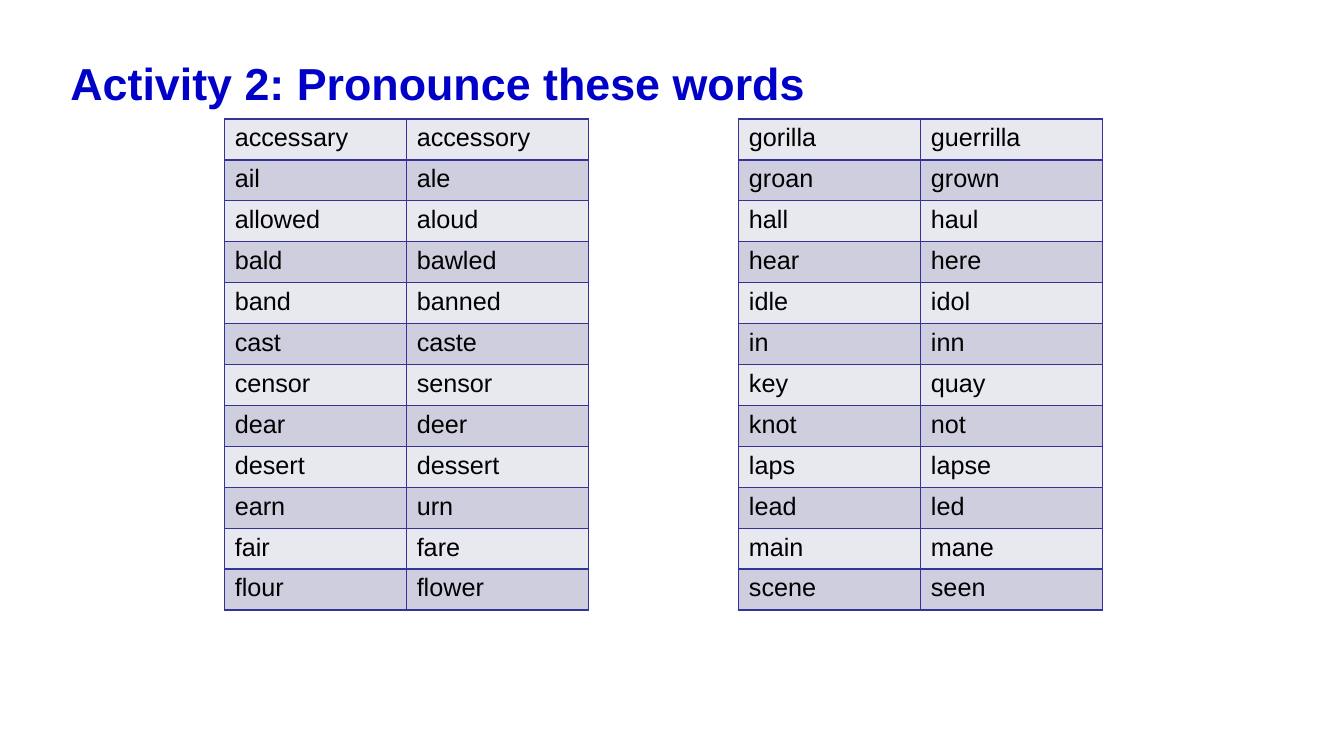
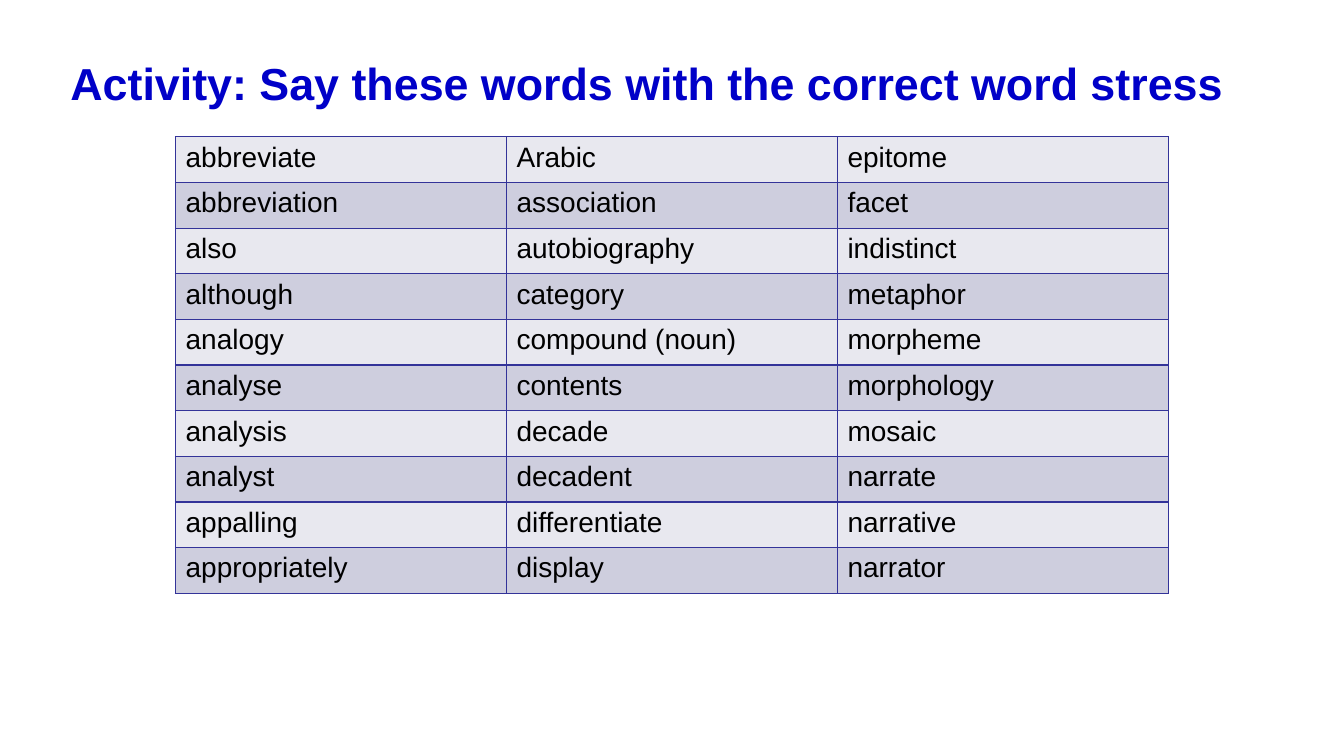
"""Build two pronunciation activity slides with banded word tables."""
from lxml.etree import SubElement
from pptx import Presentation
from pptx.dml.color import RGBColor
from pptx.enum.text import MSO_ANCHOR
from pptx.oxml.ns import qn
from pptx.util import Pt

FONT = "Arial"
TITLE_COLOR, TEXT_COLOR, BORDER = "0000C8", "000000", "333399"
BANDS = ("E8E8EF", "CECEDE")

PAIRS_A_TO_F = [
    ("accessary", "accessory"), ("ail", "ale"), ("allowed", "aloud"),
    ("bald", "bawled"), ("band", "banned"), ("cast", "caste"),
    ("censor", "sensor"), ("dear", "deer"), ("desert", "dessert"),
    ("earn", "urn"), ("fair", "fare"), ("flour", "flower"),
]
PAIRS_G_TO_S = [
    ("gorilla", "guerrilla"), ("groan", "grown"), ("hall", "haul"),
    ("hear", "here"), ("idle", "idol"), ("in", "inn"),
    ("key", "quay"), ("knot", "not"), ("laps", "lapse"),
    ("lead", "led"), ("main", "mane"), ("scene", "seen"),
]
STRESS_WORDS = [
    ("abbreviate", "Arabic", "epitome"),
    ("abbreviation", "association", "facet"),
    ("also", "autobiography", "indistinct"),
    ("although", "category", "metaphor"),
    ("analogy", "compound (noun)", "morpheme"),
    ("analyse", "contents", "morphology"),
    ("analysis", "decade", "mosaic"),
    ("analyst", "decadent", "narrate"),
    ("appalling", "differentiate", "narrative"),
    ("appropriately", "display", "narrator"),
]
PAIR_STYLE = dict(top=85, col_width=130, row_height=29.25, size=18)
STRESS_STYLE = dict(top=97.75, col_width=236.4, row_height=32.6, size=20)
SLIDES = [
    ("Activity 2: Pronounce these words",
     [(PAIRS_A_TO_F, 160.5, PAIR_STYLE), (PAIRS_G_TO_S, 527.75, PAIR_STYLE)]),
    ("Activity: Say these words with the correct word stress",
     [(STRESS_WORDS, 125.4, STRESS_STYLE)]),
]


def rgb(color):
    return RGBColor.from_string(color)


def write(tf, text, size, color=TEXT_COLOR, bold=False):
    r = tf.paragraphs[0].add_run()
    r.text = text
    r.font.name, r.font.size, r.font.bold = FONT, Pt(size), bold
    r.font.color.rgb = rgb(color)


def add_title(s, text):
    tf = s.shapes.add_textbox(Pt(43.2), Pt(33.8), Pt(867), Pt(51)).text_frame
    tf.word_wrap = True
    tf.vertical_anchor = MSO_ANCHOR.MIDDLE
    write(tf, text, 32, color=TITLE_COLOR, bold=True)


def add_borders(cell):
    tc_pr = cell._tc.get_or_add_tcPr()
    for side in ("lnL", "lnR", "lnT", "lnB"):
        ln = SubElement(tc_pr, qn(f"a:{side}"), w=str(Pt(1)))
        fill = SubElement(ln, qn("a:solidFill"))
        SubElement(fill, qn("a:srgbClr"), val=BORDER)


def add_word_table(s, rows, left, top, col_width, row_height, size):
    n_rows, n_cols = len(rows), len(rows[0])
    table = s.shapes.add_table(n_rows, n_cols, Pt(left), Pt(top),
                               Pt(n_cols * col_width), Pt(n_rows * row_height)).table
    table.first_row = table.horz_banding = False
    for col in table.columns:
        col.width = Pt(col_width)
    for i, words in enumerate(rows):
        table.rows[i].height = Pt(row_height)
        for j, word in enumerate(words):
            cell = table.cell(i, j)
            add_borders(cell)
            cell.fill.solid()
            cell.fill.fore_color.rgb = rgb(BANDS[i % 2])
            write(cell.text_frame, word, size)


def main():
    prs = Presentation()
    prs.slide_width, prs.slide_height = Pt(960), Pt(540)
    for title, tables in SLIDES:
        s = prs.slides.add_slide(prs.slide_layouts[6])
        add_title(s, title)
        for rows, left, style in tables:
            add_word_table(s, rows, left, **style)
    prs.save("out.pptx")


if __name__ == "__main__":
    main()
